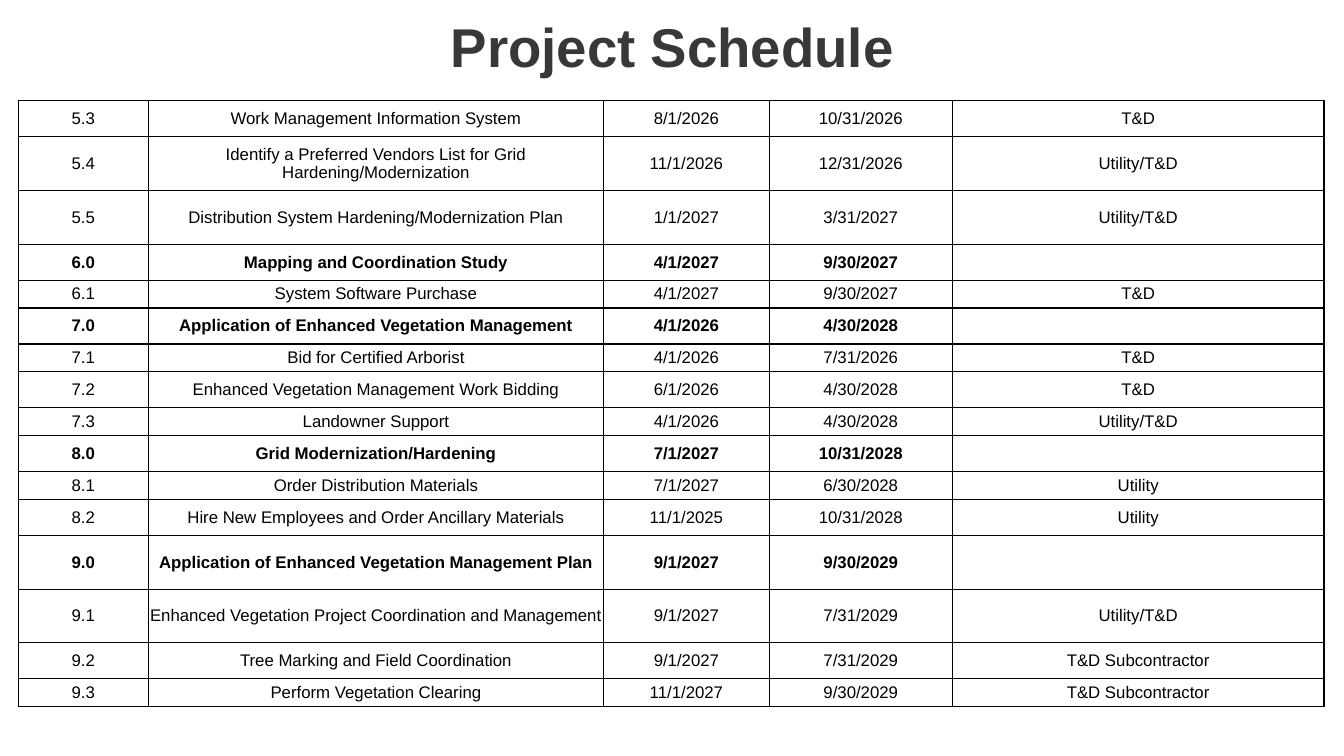
from lxml import etree
from pptx import Presentation
from pptx.dml.color import RGBColor
from pptx.enum import text
from pptx.oxml.ns import qn
from pptx.util import Pt

BLACK = RGBColor(0, 0, 0)
CHARCOAL = RGBColor(0x37, 0x38, 0x38)
FONT = "Arial"

SHORT, MEDIUM, TALL = 19.9, 25.7, 38.4
COLUMN_WIDTHS = [92.9, 325.4, 118.1, 131, 265.3]
TASKS = [
    (MEDIUM, "5.3", "Work Management Information System", "8/1/2026", "10/31/2026", "T&D"),
    (TALL, "5.4", "Identify a Preferred Vendors List for Grid Hardening/Modernization",
     "11/1/2026", "12/31/2026", "Utility/T&D"),
    (TALL, "5.5", "Distribution System Hardening/Modernization Plan",
     "1/1/2027", "3/31/2027", "Utility/T&D"),
    (MEDIUM, "6.0", "Mapping and Coordination Study", "4/1/2027", "9/30/2027", ""),
    (SHORT, "6.1", "System Software Purchase", "4/1/2027", "9/30/2027", "T&D"),
    (MEDIUM, "7.0", "Application of Enhanced Vegetation Management",
     "4/1/2026", "4/30/2028", ""),
    (SHORT, "7.1", "Bid for Certified Arborist", "4/1/2026", "7/31/2026", "T&D"),
    (MEDIUM, "7.2", "Enhanced Vegetation Management Work Bidding",
     "6/1/2026", "4/30/2028", "T&D"),
    (SHORT, "7.3", "Landowner Support", "4/1/2026", "4/30/2028", "Utility/T&D"),
    (MEDIUM, "8.0", "Grid Modernization/Hardening", "7/1/2027", "10/31/2028", ""),
    (SHORT, "8.1", "Order Distribution Materials", "7/1/2027", "6/30/2028", "Utility"),
    (MEDIUM, "8.2", "Hire New Employees and Order Ancillary Materials",
     "11/1/2025", "10/31/2028", "Utility"),
    (TALL, "9.0", "Application of Enhanced Vegetation Management Plan",
     "9/1/2027", "9/30/2029", ""),
    (TALL, "9.1", "Enhanced Vegetation Project Coordination and Management",
     "9/1/2027", "7/31/2029", "Utility/T&D"),
    (MEDIUM, "9.2", "Tree Marking and Field Coordination",
     "9/1/2027", "7/31/2029", "T&D Subcontractor"),
    (SHORT, "9.3", "Perform Vegetation Clearing",
     "11/1/2027", "9/30/2029", "T&D Subcontractor"),
]


def add_centred_run(p, wording, size, color, bold):
    p.alignment = text.PP_ALIGN.CENTER
    r = p.add_run()
    r.text = wording
    r.font.name = FONT
    r.font.size = Pt(size)
    r.font.bold = bold
    r.font.color.rgb = color


def add_borders(cell):
    tcPr = cell._tc.get_or_add_tcPr()
    for position, side in enumerate(("a:lnL", "a:lnR", "a:lnT", "a:lnB")):
        ln = etree.Element(qn(side), w=str(Pt(1)))
        fill = etree.SubElement(ln, qn("a:solidFill"))
        etree.SubElement(fill, qn("a:srgbClr"), val=str(BLACK))
        tcPr.insert(position, ln)


prs = Presentation()
prs.slide_width, prs.slide_height = Pt(960), Pt(540)
s = prs.slides.add_slide(prs.slide_layouts[6])

title = s.shapes.add_textbox(Pt(29.5), Pt(-0.7), Pt(901.4), Pt(61.2))
tf = title.text_frame
tf.word_wrap = True
tf.vertical_anchor = text.MSO_ANCHOR.BOTTOM
p = tf.paragraphs[0]
p.line_spacing = 0.9
add_centred_run(p, "Project Schedule", 39, CHARCOAL, True)

frame = s.shapes.add_table(len(TASKS), len(COLUMN_WIDTHS), Pt(13), Pt(72),
                           Pt(sum(COLUMN_WIDTHS)), Pt(sum(task[0] for task in TASKS)))
schedule = frame.table
schedule.first_row = schedule.horz_banding = False
for column, width in zip(schedule.columns, COLUMN_WIDTHS):
    column.width = Pt(width)

for row, (height, *values) in zip(schedule.rows, TASKS):
    row.height = Pt(height)
    is_phase = values[0].endswith(".0")
    for cell, value in zip(row.cells, values):
        cell.margin_left = cell.margin_right = cell.margin_top = cell.margin_bottom = 0
        cell.vertical_anchor = text.MSO_ANCHOR.MIDDLE
        cell.fill.background()
        add_borders(cell)
        p = cell.text_frame.paragraphs[0]
        if value:
            add_centred_run(p, value, 12, BLACK, is_phase)
        else:
            p.font.size = Pt(12)

prs.save("out.pptx")
